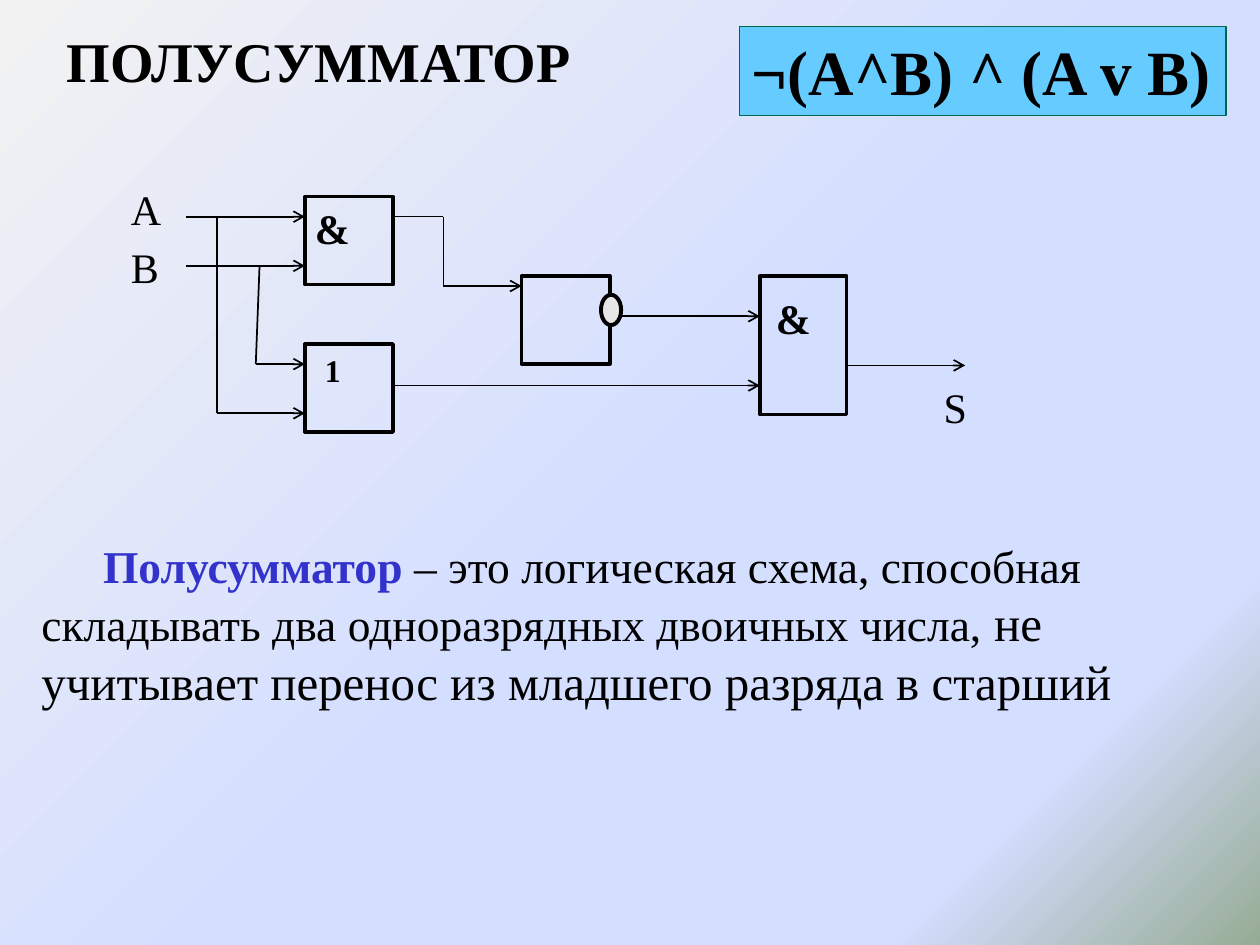
from lxml import etree
from pptx import Presentation
from pptx.dml.color import RGBColor
from pptx.enum.shapes import MSO_CONNECTOR as Connector, MSO_SHAPE as Preset
from pptx.enum.text import MSO_ANCHOR as Anchor, MSO_AUTO_SIZE as AutoSize, PP_ALIGN as Align
from pptx.oxml.ns import qn
from pptx.util import Inches, Pt

rgb = RGBColor.from_string
BLACK = "000000"

prs = Presentation()
prs.slide_width, prs.slide_height = Inches(10), Inches(7.5)
CELL = prs.slide_width / 100  # the slide is a grid of 100 columns by 75 rows


def cells(*counts):
    return [round(count * CELL) for count in counts]


def write(frame, text, size=24, bold=False, color=BLACK, grow=True):
    """Append a run to the frame's first paragraph."""
    frame.word_wrap = True
    frame.auto_size = AutoSize.SHAPE_TO_FIT_TEXT if grow else AutoSize.NONE
    paragraph = frame.paragraphs[0]
    paragraph.alignment = Align.LEFT
    run = paragraph.add_run()
    run.text = text
    run.font.name = "Times New Roman"
    run.font.size, run.font.bold = Pt(size), bold
    run.font.color.rgb = rgb(color)


slide = prs.slides.add_slide(prs.slide_layouts[5])

# Background: four gradient stops running to the lower right corner
backdrop = slide.background.fill
backdrop.gradient()
gradient = slide.background._cSld.find(".//" + qn("a:gradFill"))
stops = gradient.find(qn("a:gsLst"))
for stop in list(stops):
    stops.remove(stop)
for percent, color in [(0, "F2F2F2"), (53, "D4DEFF"), (83, "D4DEFF"), (100, "96AB94")]:
    stop = etree.SubElement(stops, qn("a:gs"), pos=str(percent * 1000))
    etree.SubElement(stop, qn("a:srgbClr"), val=color)
backdrop.gradient_angle = 315

# Title
title = slide.shapes.title
title.left, title.top, title.width, title.height = cells(4.3, 0, 90, 9.5)
title.text_frame.vertical_anchor = Anchor.MIDDLE
write(title.text_frame, "ПОЛУСУММАТОР", size=32, bold=True, grow=False)

# Circuit: columns and rows shared by gates and wires
circuit = slide.shapes.add_group_shape().shapes
GATE = 7
FIRST, INVERTER, LAST = 24.2, 41.4, 60.3
A_ROW, B_ROW, OR_B_ROW, OR_A_ROW = 17.2, 21.1, 28.9, 32.8
INPUT, A_BRANCH, B_BRANCH, BEND = 14.8, 17.2, 20.3, 35.2
NOT_ROW, INVERTED_ROW, OR_OUT_ROW, SUM_ROW = 22.7, 25.1, 30.6, 29
FIRST_OUT, LAST_OUT = FIRST + GATE, LAST + 6.9

for left, top, width, height in [
    (FIRST, 15.6, GATE, GATE),
    (FIRST, 27.3, GATE, GATE),
    (INVERTER, 21.9, GATE, GATE),
    (LAST, 21.9, 6.9, 11),
]:
    gate = circuit.add_shape(Preset.RECTANGLE, *cells(left, top, width, height))
    gate.shadow.inherit = False
    gate.fill.background()
    gate.line.color.rgb = rgb(BLACK)
    gate.line.width = Pt(2)

for x1, y1, x2, y2, weight, arrow in [
    (INPUT, A_ROW, FIRST, A_ROW, 1, True),
    (INPUT, B_ROW, FIRST, B_ROW, 1, True),
    (B_BRANCH + 0.3, B_ROW, B_BRANCH, OR_B_ROW, 1, False),
    (A_BRANCH, A_ROW, A_BRANCH, OR_A_ROW, 1, False),
    (B_BRANCH, OR_B_ROW, FIRST, OR_B_ROW, 1, True),
    (A_BRANCH, OR_A_ROW, FIRST, OR_A_ROW, 1, True),
    (FIRST_OUT, A_ROW, BEND, A_ROW, 0.75, False),
    (BEND, A_ROW, BEND, NOT_ROW, 0.75, False),
    (BEND, NOT_ROW, INVERTER, NOT_ROW, 1, True),
    (FIRST_OUT, OR_OUT_ROW, LAST, OR_OUT_ROW, 1, True),
    (INVERTER + GATE, INVERTED_ROW, LAST, INVERTED_ROW, 1, True),
    (LAST_OUT, SUM_ROW, 76.6, SUM_ROW, 1, True),
]:
    wire = circuit.add_connector(Connector.STRAIGHT, *cells(x1, y1, x2, y2))
    wire.line.color.rgb = rgb(BLACK)
    wire.line.width = Pt(weight)
    if arrow:
        etree.SubElement(wire.line._get_or_add_ln(), qn("a:tailEnd"), type="arrow")
    etree.SubElement(wire._element.spPr, qn("a:effectLst"))

for label, left, top, width, height, size, bold in [
    ("А", 9.4, 14.1, 3.9, 4, 24, False),
    ("В", 9.4, 18.7, 3.9, 4, 24, False),
    ("&", 24, 15.6, 3.9, 5, 24, True),
    ("1", 24.8, 27.4, 2.5, 4, 18, True),
    ("&", 60.6, 22.7, 3.9, 5, 24, True),
    ("S", 73.9, 29.8, 3.9, 4, 24, False),
]:
    caption = circuit.add_textbox(*cells(left, top, width, height))
    write(caption.text_frame, label, size=size, bold=bold)

# Inversion mark on the middle gate, and the formula
bubble = slide.shapes.add_shape(Preset.OVAL, *cells(47.7, 23.4, 1.6, 2.4))
formula = slide.shapes.add_shape(Preset.RECTANGLE, *cells(58.7, 2.1, 38.6, 7.1))
for part, fill, outline, weight in [
    (bubble, "E6E6E6", BLACK, 2.25),
    (formula, "66CCFF", "00664D", 0.75),
]:
    part.shadow.inherit = False
    part.fill.solid()
    part.fill.fore_color.rgb = rgb(fill)
    part.line.color.rgb = rgb(outline)
    part.line.width = Pt(weight)
formula.text_frame.vertical_anchor = Anchor.TOP
write(formula.text_frame, "¬(A^B) ^ (A v B)", size=36, bold=True)

# Definition
definition = slide.shapes.add_textbox(*cells(2.3, 42.2, 93.8, 14.8)).text_frame
write(definition, "Полусумматор", size=26, bold=True, color="3333CC")
write(definition, " – это логическая схема, способная складывать два одноразрядных двоичных числа, ", size=26)
write(definition, "не учитывает перенос из младшего разряда в старший", size=28)
opening = definition.paragraphs[0]
opening.space_before = Pt(4)
opening._p.get_or_add_pPr().set("indent", str(cells(4.9)[0]))

prs.save("out.pptx")
